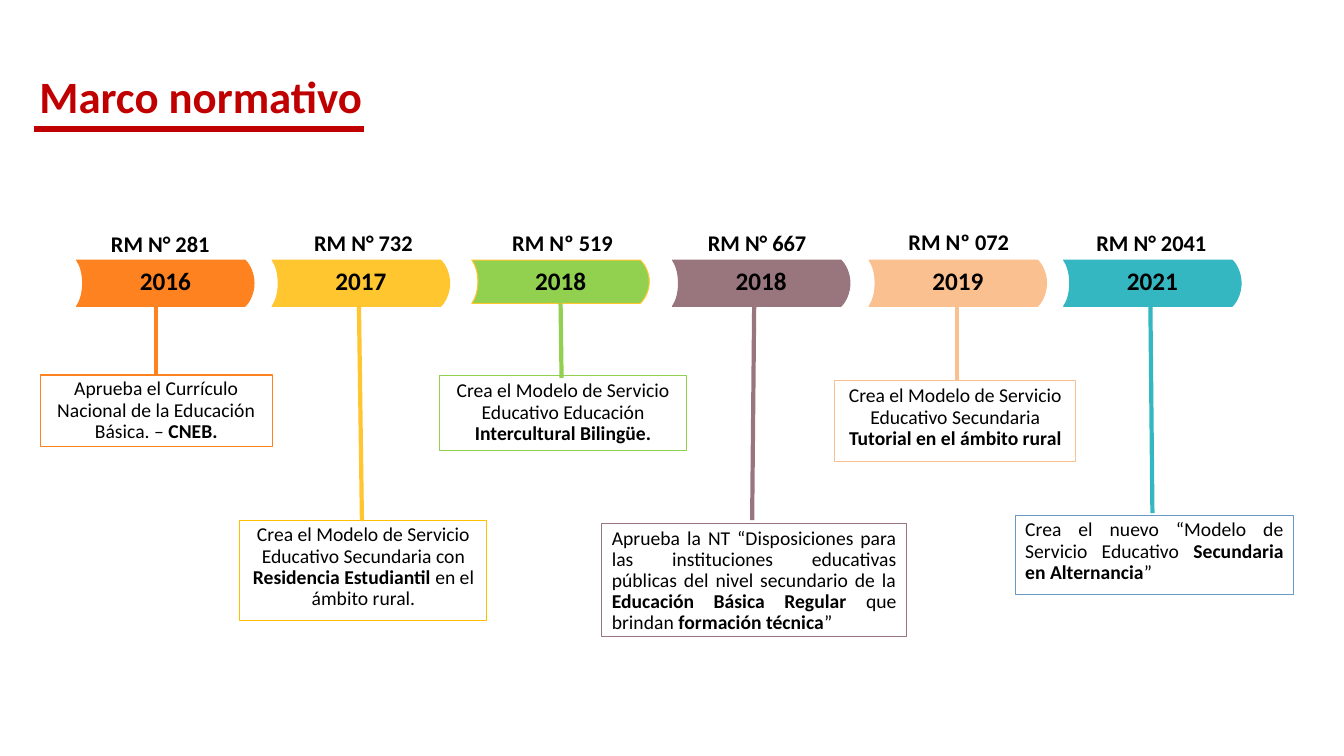
from dataclasses import dataclass
from typing import Any

import pptx
import pptx.dml.color
import pptx.enum.shapes
import pptx.enum.text
import pptx.oxml
import pptx.oxml.ns
import pptx.util

ALIGN = pptx.enum.text.PP_ALIGN
ANCHOR = pptx.enum.text.MSO_ANCHOR
PX = 9144  # EMU per px, 100 px to the inch
BANNER_TOP, BANNER_W = 258, 176
TIP, NOTCH = 9, 6


@dataclass(frozen=True)
class Theme:
    font: str = "Calibri"
    title_pt: int = 32
    year_pt: int = 18
    label_pt: int = 16
    body_pt: int = 14
    border_pt: float = 0.75
    stem_pt: float = 3
    rule_pt: float = 4.5
    red: str = "C00000"
    black: str = "000000"
    orange: str = "FF8220"
    yellow: str = "FFC62F"
    amber: str = "FFC000"
    green: str = "92D050"
    mauve: str = "99767E"
    peach: str = "FAC090"
    teal: str = "35B7C2"
    blue: str = "6A98C4"


THEME = Theme()


@dataclass(frozen=True)
class Box:
    x: int
    y: int
    w: int
    h: int


@dataclass(frozen=True)
class Milestone:
    """A dated norm; its text runs alternate between regular and bold."""
    year: str
    norm: str
    runs: tuple[str, ...]
    color: str
    banner_x: int
    label: Box
    card: Box
    stem: tuple[int, int, int, int]
    banner_h: int = 46
    banner_line: str = ""
    card_line: str = ""
    align: Any = ALIGN.CENTER
    anchor: Any = ANCHOR.TOP


MILESTONES = (
    Milestone("2016", "RM N° 281",
              ("Aprueba el Currículo Nacional de la Educación Básica. – ", "CNEB."),
              THEME.orange, 76, Box(71, 228, 176, 39), Box(40, 372, 230, 71),
              (155, 372, 155, 303), anchor=ANCHOR.MIDDLE),
    Milestone("2017", "RM N° 732",
              ("Crea el Modelo de Servicio Educativo Secundaria con ",
               "Residencia Estudiantil ", "en el ámbito rural."),
              THEME.yellow, 270, Box(279, 227, 163, 39), Box(238, 516, 245, 100),
              (359, 517, 356, 302), card_line=THEME.amber),
    Milestone("2018", "RM Nº 519",
              ("Crea el Modelo de Servicio Educativo Educación ",
               "Intercultural Bilingüe."),
              THEME.green, 468, Box(470, 227, 176, 39), Box(436, 373, 245, 74),
              (557, 375, 556, 301), banner_h=43, banner_line=THEME.yellow),
    Milestone("2018", "RM N° 667",
              ("Aprueba la NT “Disposiciones para las instituciones educativas "
               "públicas del nivel secundario de la ",
               "Educación Básica Regular ", "que brindan ", "formación técnica", "”"),
              THEME.mauve, 667, Box(613, 227, 276, 39), Box(597, 519, 302, 112),
              (746, 516, 748, 304), align=ALIGN.JUSTIFY),
    Milestone("2019", "RM Nº 072",
              ("Crea el Modelo de Servicio Educativo Secundaria ",
               "Tutorial en el ámbito rural"),
              THEME.peach, 862, Box(836, 226, 230, 43), Box(828, 378, 239, 80),
              (949, 378, 949, 303)),
    Milestone("2021", "RM N° 2041",
              ("Crea el nuevo “Modelo de Servicio Educativo ",
               "Secundaria en Alternancia", "”"),
              THEME.teal, 1055, Box(1062, 227, 160, 39), Box(1007, 511, 276, 79),
              (1143, 509, 1141, 304), card_line=THEME.blue, align=ALIGN.JUSTIFY),
)


def set_all(target: Any, values: dict[str, Any]) -> None:
    for name, value in values.items():
        setattr(target, name, value)


def rgb(color: str) -> pptx.dml.color.RGBColor:
    return pptx.dml.color.RGBColor.from_string(color)


def emu(box: Box) -> tuple[int, int, int, int]:
    return box.x * PX, box.y * PX, box.w * PX, box.h * PX


def write(sp: Any, runs: list[tuple[str, bool]], size: int, align: Any = ALIGN.CENTER,
          anchor: Any = ANCHOR.TOP, inset: tuple[int, int] = (10, 5),
          spacing: float = 1.0, color: str = THEME.black) -> None:
    """Fill a shape with one paragraph of (text, bold) runs."""
    tf = sp.text_frame
    dx, dy = inset[0] * PX, inset[1] * PX
    set_all(tf, {"word_wrap": True, "vertical_anchor": anchor,
                 "auto_size": pptx.enum.text.MSO_AUTO_SIZE.NONE,
                 "margin_left": dx, "margin_right": dx,
                 "margin_top": dy, "margin_bottom": dy})
    p = tf.paragraphs[0]
    set_all(p, {"alignment": align, "line_spacing": spacing})
    for text, bold in runs:
        r = p.add_run()
        r.text = text
        set_all(r.font, {"name": THEME.font, "size": pptx.util.Pt(size), "bold": bold})
        r.font.color.rgb = rgb(color)


def outline(sp: Any, color: str, width: float) -> None:
    sp.line.color.rgb = rgb(color)
    sp.line.width = pptx.util.Pt(width)


def add_line(shapes: Any, ends: tuple[int, int, int, int], color: str,
             width: float) -> None:
    sp = shapes.add_connector(pptx.enum.shapes.MSO_CONNECTOR.STRAIGHT,
                              *(v * PX for v in ends))
    outline(sp, color, width)
    sp._element.spPr.append(pptx.oxml.parse_xml(
        f"<a:effectLst {pptx.oxml.ns.nsdecls('a')}/>"))


def curve_segment(segment: Any, controls: tuple[tuple[float, float], ...]) -> None:
    """Turn a straight path segment into a cubic curve with two control points."""
    segment.tag = pptx.oxml.ns.qn("a:cubicBezTo")
    for i, (x, y) in enumerate(controls):
        segment.insert(i, pptx.oxml.parse_xml(
            f"<a:pt {pptx.oxml.ns.nsdecls('a')} x='{round(x * PX)}' y='{round(y * PX)}'/>"))


def add_banner(shapes: Any, m: Milestone) -> None:
    """Draw the year ribbon: a notch on the left, a rounded tip on the right."""
    w, h = BANNER_W, m.banner_h
    mid, shoulder = h / 2, w - TIP
    points = ((w, mid), (shoulder, 0), (0, 0), (NOTCH, mid), (0, h), (shoulder, h), (w, mid))
    curves = {0: ((w, h * 0.3), (w - 4, h * 0.1)),
              2: ((4, h * 0.13), (NOTCH, h * 0.3)),
              3: ((NOTCH, h * 0.7), (4, h * 0.87)),
              5: ((w - 4, h * 0.9), (w, h * 0.7))}
    start, *rest = [(round((m.banner_x + x) * PX), round((BANNER_TOP + y) * PX))
                    for x, y in points]
    builder = shapes.build_freeform(*start)
    builder.add_line_segments(rest, close=True)
    sp = builder.convert_to_shape()
    segments = list(sp._element.iter(pptx.oxml.ns.qn("a:lnTo")))
    for i, controls in curves.items():
        curve_segment(segments[i], controls)
    sp.shadow.inherit = False
    sp.fill.solid()
    sp.fill.fore_color.rgb = rgb(m.color)
    outline(sp, m.banner_line or m.color, THEME.border_pt)
    write(sp, [(m.year, True)], THEME.year_pt)


def add_card(shapes: Any, m: Milestone) -> None:
    sp = shapes.add_shape(pptx.enum.shapes.MSO_SHAPE.RECTANGLE, *emu(m.card))
    sp.shadow.inherit = False
    sp.fill.background()
    outline(sp, m.card_line or m.color, THEME.border_pt)
    runs = [(text, i % 2 == 1) for i, text in enumerate(m.runs)]
    write(sp, runs, THEME.body_pt, m.align, m.anchor, spacing=0.9)


def add_milestone(s: Any, m: Milestone) -> None:
    shapes = s.shapes.add_group_shape().shapes
    add_banner(shapes, m)
    label = shapes.add_textbox(*emu(m.label))
    write(label, [(m.norm, True)], THEME.label_pt, inset=(0, 0))
    add_card(shapes, m)
    add_line(shapes, m.stem, m.color, THEME.stem_pt)


def main() -> None:
    prs = pptx.Presentation()
    set_all(prs, {"slide_width": 1333 * PX, "slide_height": 750 * PX})
    s = prs.slides.add_slide(prs.slide_layouts.get_by_name("Title Only"))
    title = s.shapes.title
    set_all(title, dict(zip(("left", "top", "width", "height"),
                            emu(Box(29, 64, 1255, 69)))))
    write(title, [("Marco normativo", True)], THEME.title_pt, ALIGN.LEFT,
          ANCHOR.MIDDLE, spacing=0.9, color=THEME.red)
    add_line(s.shapes, (34, 128, 361, 128), THEME.red, THEME.rule_pt)
    for m in MILESTONES:
        add_milestone(s, m)
    prs.save("out.pptx")


if __name__ == "__main__":
    main()
